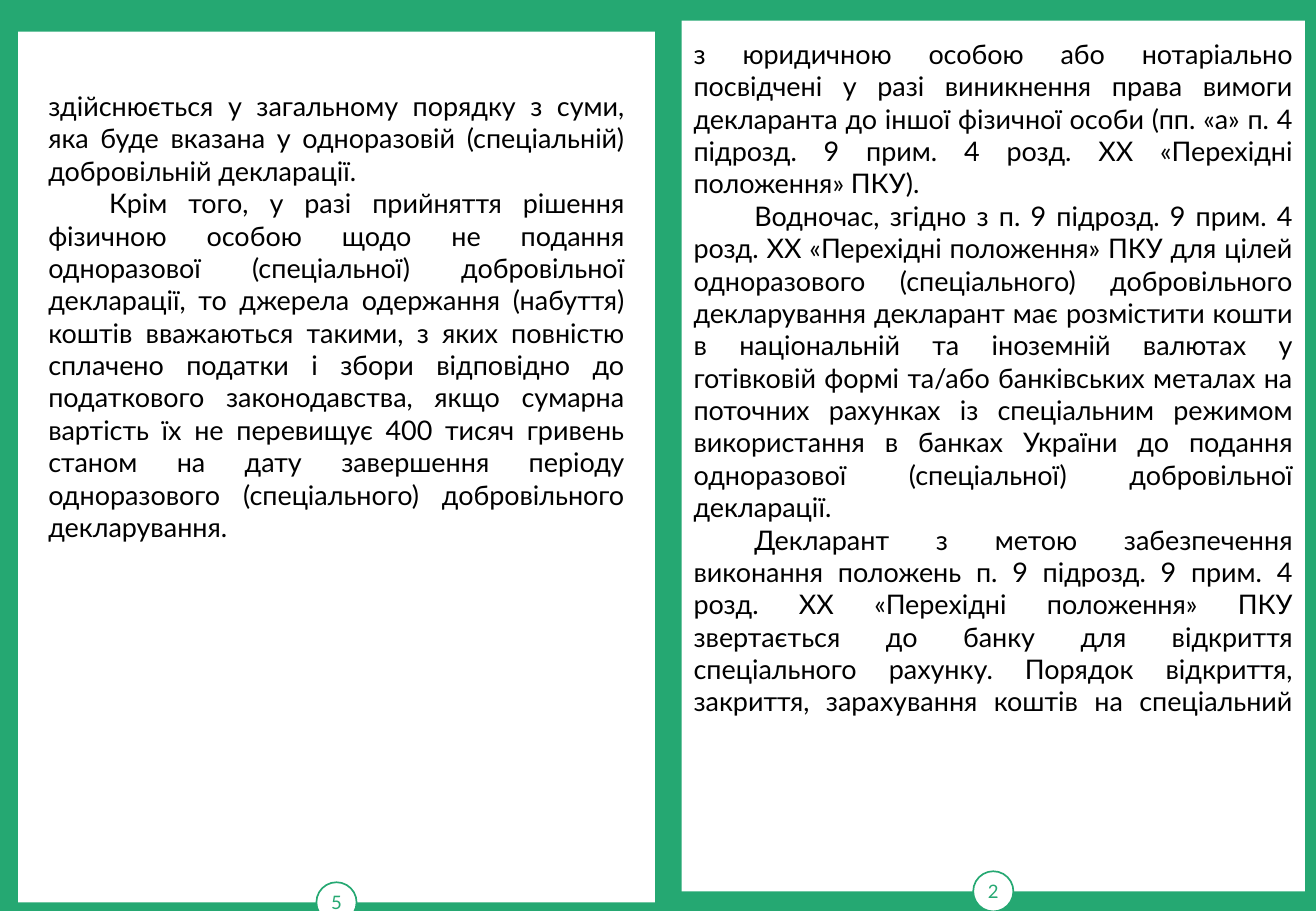
from pptx import Presentation
from pptx.dml.color import RGBColor
from pptx.enum.shapes import MSO_SHAPE
from pptx.enum.text import MSO_ANCHOR, PP_ALIGN
from pptx.util import Cm, Pt

GREEN = "25A872"
WHITE = "FFFFFF"
BLACK = "000000"
FONT = "Lato"
BADGE_SIZE = 0.84
FIRST_LINE_INDENT = 1.27

LEFT_PAGE = [
    ("здійснюється у загальному порядку з суми, яка буде вказана у одноразовій "
     "(спеціальній) добровільній декларації.", False),
    ("Крім того, у разі прийняття рішення фізичною особою щодо не подання одноразової "
     "(спеціальної) добровільної декларації, то джерела одержання (набуття) коштів "
     "вважаються такими, з яких повністю сплачено податки і збори відповідно до "
     "податкового законодавства, якщо сумарна вартість їх не перевищує 400 тисяч гривень "
     "станом на дату завершення періоду одноразового (спеціального) добровільного "
     "декларування.", True),
]
RIGHT_PAGE = [
    ("з юридичною особою або нотаріально посвідчені у разі виникнення права вимоги "
     "декларанта до іншої фізичної особи (пп. «а» п. 4 підрозд. 9 прим. 4 розд. ХХ "
     "«Перехідні положення» ПКУ).", False),
    ("Водночас, згідно з п. 9 підрозд. 9 прим. 4 розд. ХХ «Перехідні положення» ПКУ для "
     "цілей одноразового (спеціального) добровільного декларування декларант має "
     "розмістити кошти в національній та іноземній валютах у готівковій формі та/або "
     "банківських металах на поточних рахунках із спеціальним режимом використання в "
     "банках України до подання одноразової (спеціальної) добровільної декларації.", True),
    ("Декларант з метою забезпечення виконання положень п. 9 підрозд. 9 прим. 4 розд. ХХ "
     "«Перехідні положення» ПКУ звертається до банку для відкриття спеціального рахунку. "
     "Порядок відкриття, закриття, зарахування коштів на спеціальний\v", True),
]


def color(value):
    return RGBColor.from_string(value)


def format_runs(paragraph, size, ink):
    for run in paragraph.runs:
        run.font.name = FONT
        run.font.size = Pt(size)
        run.font.color.rgb = color(ink)


def add_white_shape(slide, kind, left, top, width, height):
    shape = slide.shapes.add_shape(kind, Cm(left), Cm(top), Cm(width), Cm(height))
    shape.shadow.inherit = False
    shape.fill.solid()
    shape.fill.fore_color.rgb = color(WHITE)
    shape.line.fill.background()
    return shape


def add_page_number(slide, center_x, center_y, number):
    badge = add_white_shape(slide, MSO_SHAPE.OVAL, center_x - BADGE_SIZE / 2,
                            center_y - BADGE_SIZE / 2, BADGE_SIZE, BADGE_SIZE)
    badge.line.color.rgb = color(GREEN)
    badge.line.width = Pt(1)
    frame = badge.text_frame
    frame.margin_left = frame.margin_right = frame.margin_top = frame.margin_bottom = 0
    frame.vertical_anchor = MSO_ANCHOR.MIDDLE
    frame.word_wrap = False
    frame.text = number
    frame.paragraphs[0].alignment = PP_ALIGN.CENTER
    format_runs(frame.paragraphs[0], 11, GREEN)


def add_body(slide, left, top, width, height, passages):
    body = slide.shapes.add_textbox(Cm(left), Cm(top), Cm(width), Cm(height))
    frame = body.text_frame
    frame.word_wrap = True
    for index, (passage, indented) in enumerate(passages):
        paragraph = frame.add_paragraph() if index else frame.paragraphs[0]
        paragraph.text = passage
        paragraph.alignment = PP_ALIGN.JUSTIFY
        if indented:
            paragraph._p.get_or_add_pPr().set("indent", str(Cm(FIRST_LINE_INDENT)))
        format_runs(paragraph, 16, BLACK)


def add_page(slide, left, top, width, height, number, passages, side_gap, top_gap):
    add_white_shape(slide, MSO_SHAPE.RECTANGLE, left, top, width, height)
    add_page_number(slide, left + width / 2, top + height, number)
    add_body(slide, left + side_gap, top + top_gap, width - 2 * side_gap,
             height - top_gap - BADGE_SIZE, passages)


def main():
    presentation = Presentation()
    presentation.slide_width = Cm(27.51)
    presentation.slide_height = Cm(19.05)
    slide = presentation.slides.add_slide(presentation.slide_layouts[6])
    slide.background.fill.solid()
    slide.background.fill.fore_color.rgb = color(GREEN)
    add_page(slide, 0.38, 0.66, 13.31, 18.21, "5", LEFT_PAGE, 0.38, 1.09)
    add_page(slide, 14.25, 0.43, 13.03, 18.21, "2", RIGHT_PAGE, 0, 0.23)
    presentation.save("out.pptx")


if __name__ == "__main__":
    main()
